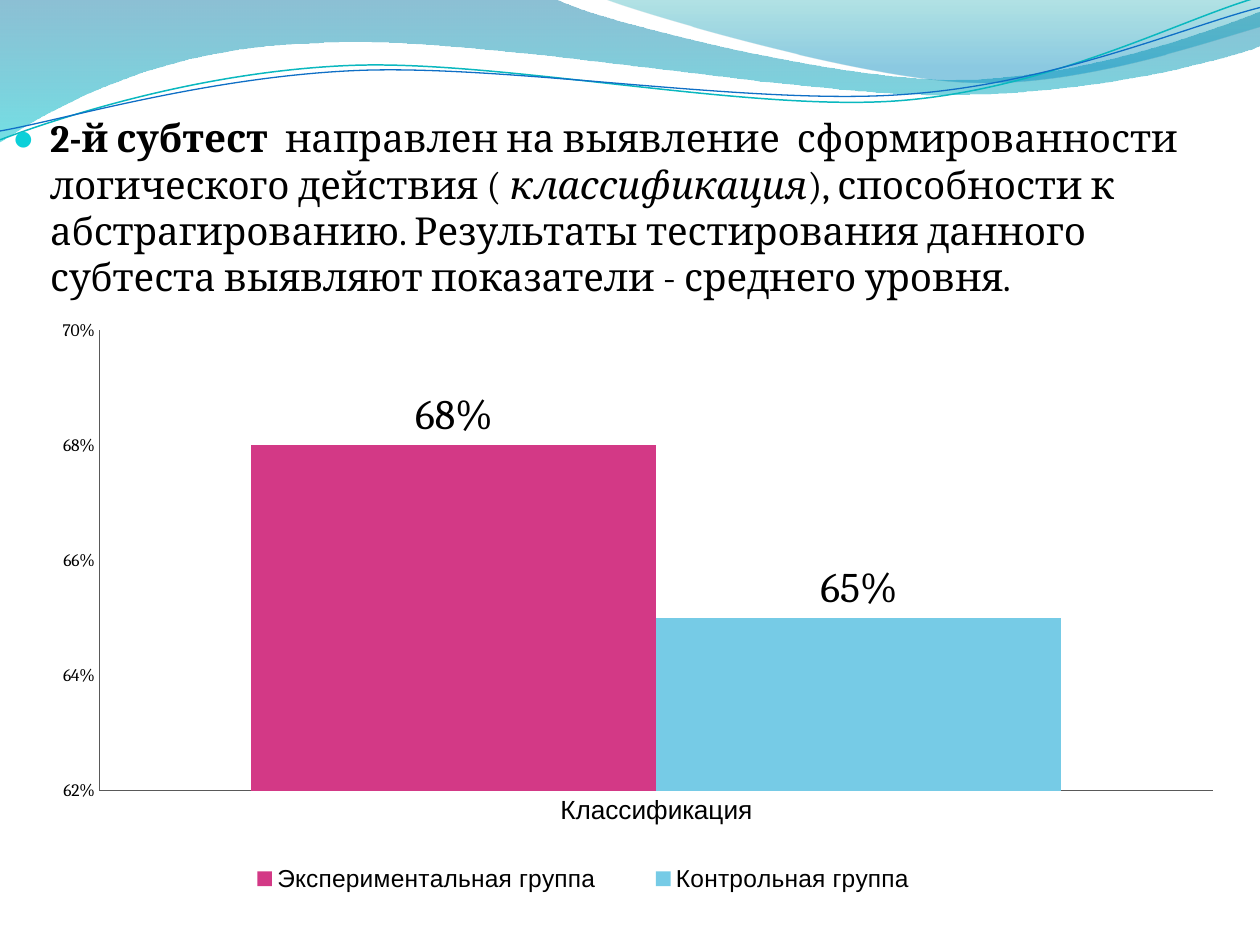
from dataclasses import dataclass
from math import cos, radians, sin
from typing import Optional

from lxml import etree
from pptx import Presentation
from pptx.chart.data import CategoryChartData
from pptx.dml.color import RGBColor
from pptx.enum.chart import XL_CHART_TYPE, XL_LABEL_POSITION, XL_LEGEND_POSITION, XL_TICK_MARK
from pptx.oxml.ns import qn
from pptx.util import Inches, Pt

COLUMN = XL_CHART_TYPE.COLUMN_CLUSTERED
OUTSIDE_END = XL_LABEL_POSITION.OUTSIDE_END
BOTTOM = XL_LEGEND_POSITION.BOTTOM
NO_TICK = XL_TICK_MARK.NONE

W, H = 10, 7.5
TILT = -2.7
C = {
    "black": "000000", "bullet": "0BD0D9", "axis": "595959",
    "deep_blue": "0074A1", "teal": "00C6CF", "sea": "00A1A9", "sky": "008BBF",
    "teal_line": "0AB8BF", "blue_line": "0F6FC6",
    "pink": "D33986", "light_blue": "76CBE6",
}


@dataclass
class Stop:
    position: float
    color: str
    opacity: int


@dataclass
class Wave:
    """Outline in inches: pairs are line ends, sextets are cubic curves."""
    segments: list
    stops: Optional[list] = None
    line: Optional[str] = None
    width: float = 0
    pivot: Optional[tuple] = None


@dataclass
class Group:
    name: str
    value: float
    color: str


WAVES = [
    Wave([(0, 0), (4.4, -0.01), (4.76, 0.17, 6.64, 0.63, 7.58, 0.63),
          (8.53, 0.63, 9.58, 0.26, 10, 0.09), (10.01, 0.36),
          (9.83, 0.44, 8.7, 0.76, 7.46, 0.75), (6.22, 0.75, 3.82, 0.28, 2.57, 0.34),
          (1.29, 0.36, 0.46, 0.83, -0.01, 1.13)],
         stops=[Stop(0, "deep_blue", 45), Stop(1, "teal", 55)]),
    Wave([(4.79, -0.01), (5.09, 0.11, 6.82, 0.62, 7.69, 0.65),
          (8.56, 0.69, 9.61, 0.32, 10, 0.21), (10, 0)],
         stops=[Stop(0, "sea", 30), Stop(0.8, "sky", 45)]),
    Wave([(0, 1.11), (0.48, 0.93, 1.58, 0.57, 2.77, 0.52),
          (3.95, 0.47, 5.93, 0.89, 7.13, 0.8), (8.33, 0.71, 9.38, 0.15, 9.98, -0.02)],
         line="teal_line", width=0.85, pivot=(4.99, 0.57)),
    Wave([(0, 1.04), (0.47, 0.96, 1.64, 0.61, 2.83, 0.56),
          (4.03, 0.51, 5.97, 0.84, 7.17, 0.75), (8.36, 0.67, 9.41, 0.21, 10, 0.06)],
         line="blue_line", width=0.75, pivot=(5, 0.59)),
]
GROUPS = [
    Group("Экспериментальная группа", 0.68, "pink"),
    Group("Контрольная группа", 0.65, "light_blue"),
]
RUNS = [
    ("2-й субтест  ", {"bold": True}),
    ("направлен на выявление  сформированности логического действия ( ", {}),
    ("классификация", {"italic": True}),
    ("), способности к абстрагированию. Результаты тестирования данного "
     "субтеста выявляют показатели - среднего уровня.", {}),
]


def rgb(name: str) -> RGBColor:
    return RGBColor.from_string(C[name])


def set_font(font, size: float, name: str = "Cambria", color: str = "black",
             bold: bool = False, italic: bool = False) -> None:
    font.size, font.name = Pt(size), name
    font.bold, font.italic = bold, italic
    font.color.rgb = rgb(color)


def add_run(p, text: str, **fmt) -> None:
    r = p.add_run()
    r.text = text
    set_font(r.font, **fmt)


def segment_points(segment: tuple, pivot: Optional[tuple]) -> list:
    """Points of a segment in EMU, turned back by the tilt of its shape."""
    points = list(zip(segment[::2], segment[1::2]))
    if pivot:
        a, (cx, cy) = radians(-TILT), pivot
        points = [(cx + (x - cx) * cos(a) - (y - cy) * sin(a),
                   cy + (x - cx) * sin(a) + (y - cy) * cos(a)) for x, y in points]
    return [(Inches(x), Inches(y)) for x, y in points]


def add_wave(s, wave: Wave) -> None:
    start, *segments = [segment_points(seg, wave.pivot) for seg in wave.segments]
    fb = s.shapes.build_freeform(*start[0], scale=1)
    fb.add_line_segments([seg[-1] for seg in segments], close=wave.stops is not None)
    sp = fb.convert_to_shape()
    sp.shadow.inherit = False

    # Bend the straight segments that have control points
    left, top = sp.left, sp.top
    for ln, seg in zip(list(sp._element.iter(qn("a:lnTo"))), segments):
        if len(seg) == 3:
            curve = etree.Element(qn("a:cubicBezTo"))
            for x, y in seg:
                etree.SubElement(curve, qn("a:pt"), x=str(x - left), y=str(y - top))
            ln.getparent().replace(ln, curve)

    if wave.line:
        sp.rotation = TILT
        sp.fill.background()
        sp.line.color.rgb = rgb(wave.line)
        sp.line.width = Pt(wave.width)
        return
    sp.line.fill.background()
    sp.fill.gradient()
    sp.fill.gradient_angle = 270
    for stop, spec in zip(sp.fill.gradient_stops, wave.stops):
        stop.position = spec.position
        stop.color.rgb = rgb(spec.color)
    for clr, spec in zip(sp._element.spPr.iter(qn("a:srgbClr")), wave.stops):
        etree.SubElement(clr, qn("a:alpha"), val=str(spec.opacity * 1000))


def add_bullet(p, indent: float) -> None:
    pPr = p._p.get_or_add_pPr()
    pPr.set("marL", str(Inches(indent)))
    pPr.set("indent", str(-Inches(indent)))
    clr = etree.SubElement(pPr, qn("a:buClr"))
    etree.SubElement(clr, qn("a:srgbClr"), val=C["bullet"])
    etree.SubElement(pPr, qn("a:buSzPct"), val="95000")
    etree.SubElement(pPr, qn("a:buFont"), typeface="Arial")
    etree.SubElement(pPr, qn("a:buChar"), char="●")


def set_layout(parent, after, *box: float, inner: bool = False) -> None:
    """Place a chart part by x, y, w, h in percent; after is the element before it."""
    for old in parent.findall(qn("c:layout")):
        parent.remove(old)
    layout = etree.Element(qn("c:layout"))
    manual = etree.SubElement(layout, qn("c:manualLayout"))
    values = [("layoutTarget", "inner")] if inner else []
    values += [("xMode", "edge"), ("yMode", "edge")]
    values += [(tag, round(v / 100, 3)) for tag, v in zip("xywh", box)]
    for tag, val in values:
        etree.SubElement(manual, qn("c:" + tag), val=str(val))
    parent.insert(0 if after is None else parent.index(after) + 1, layout)


def add_groups_chart(s) -> None:
    data = CategoryChartData(number_format="0%")
    data.categories = ["Классификация"]
    for g in GROUPS:
        data.add_series(g.name, [g.value])
    chart = s.shapes.add_chart(COLUMN, 0, Inches(H / 3), Inches(W), Inches(H * 2 / 3), data).chart
    set_font(chart.font, 10)
    chart.has_title = False

    # Columns and their labels
    plot = chart.plots[0]
    plot.gap_width, plot.overlap, plot.vary_by_categories = 75, 0, False
    for series, g in zip(plot.series, GROUPS):
        series.format.fill.solid()
        series.format.fill.fore_color.rgb = rgb(g.color)
        labels = series.data_labels
        labels.show_value, labels.position = True, OUTSIDE_END
        labels.number_format, labels.number_format_is_linked = "0%", False
        set_font(labels.font, 24)

    # Axes
    cat, val = chart.category_axis, chart.value_axis
    for axis in (cat, val):
        axis.major_tick_mark = axis.minor_tick_mark = NO_TICK
        axis.has_major_gridlines = False
        axis.format.line.color.rgb = rgb("axis")
        axis.format.line.width = Pt(1)
    set_font(cat.tick_labels.font, 15, "Arial")
    set_font(val.tick_labels.font, 10)
    val.minimum_scale, val.maximum_scale, val.major_unit = 0.62, 0.7, 0.02
    val.tick_labels.number_format, val.tick_labels.number_format_is_linked = "0%", False

    # Legend and placement
    chart.has_legend = True
    legend = chart.legend
    legend.position, legend.include_in_layout = BOTTOM, False
    set_font(legend.font, 14, "Arial")
    box = legend._element
    set_layout(box, box.find(qn("c:legendPos")), 16.3, 86, 60, 7)
    set_layout(chart._chartSpace.chart.plotArea, None, 7.9, 2.4, 88.4, 73.1, inner=True)


def main() -> None:
    prs = Presentation()
    prs.slide_width, prs.slide_height = Inches(W), Inches(H)
    s = prs.slides.add_slide(prs.slide_layouts[6])
    # Header waves
    for wave in WAVES:
        add_wave(s, wave)
    # Description
    tf = s.shapes.add_textbox(0, Inches(0.86), Inches(W), Inches(H - 0.86)).text_frame
    tf.word_wrap = True
    p = tf.paragraphs[0]
    p.space_before = Pt(4.4)
    add_bullet(p, 0.3)
    for text, fmt in RUNS:
        add_run(p, text, size=22, **fmt)
    # Results
    add_groups_chart(s)
    prs.save("out.pptx")


if __name__ == "__main__":
    main()
